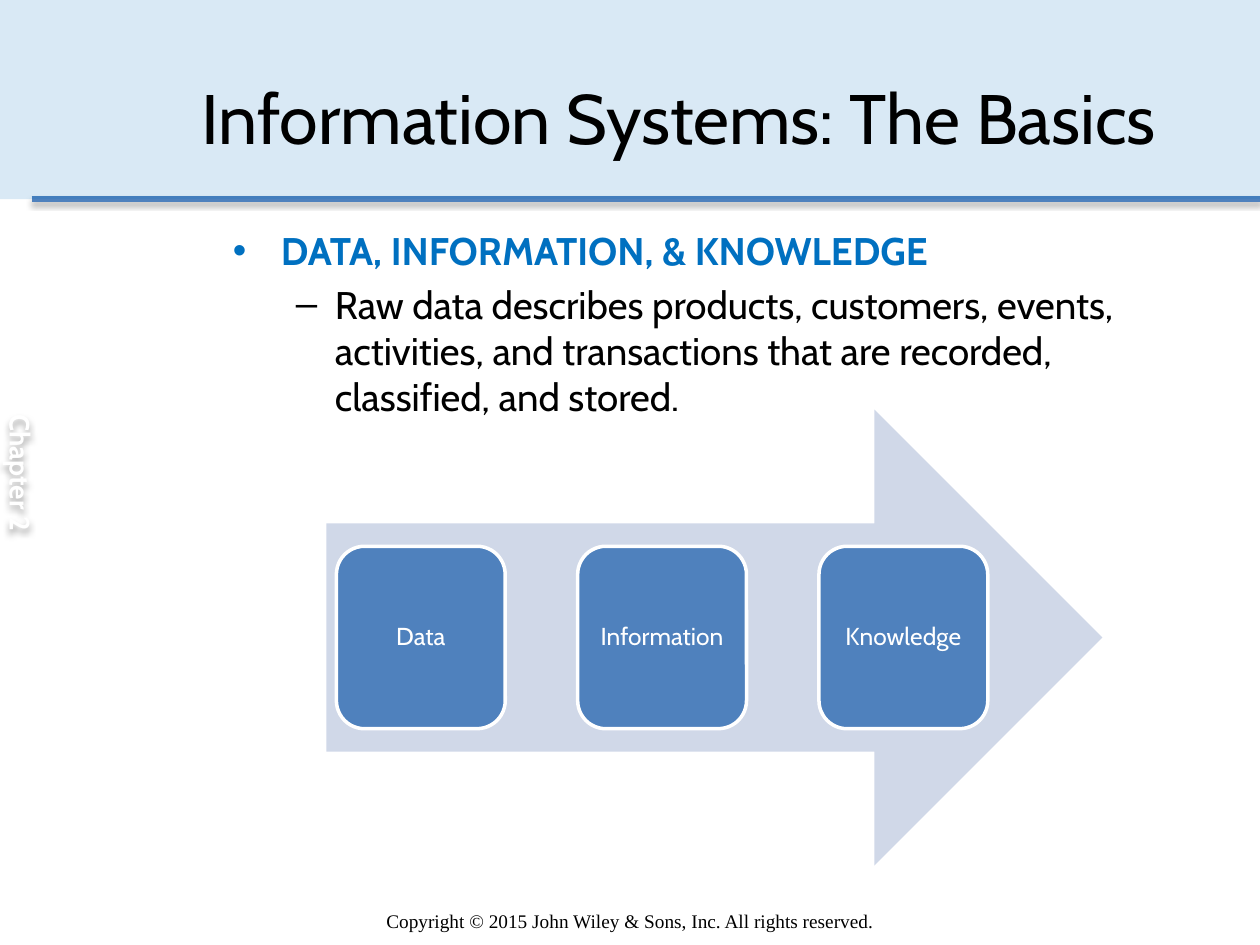
from lxml import etree
from pptx import Presentation
from pptx.dml.color import RGBColor
from pptx.enum.shapes import MSO_CONNECTOR, MSO_SHAPE
from pptx.enum.text import MSO_ANCHOR, MSO_AUTO_SIZE, PP_ALIGN
from pptx.oxml.ns import qn
from pptx.util import Inches, Pt

STRAIGHT = MSO_CONNECTOR.STRAIGHT
RECTANGLE = MSO_SHAPE.RECTANGLE
ROUNDED = MSO_SHAPE.ROUNDED_RECTANGLE
RIGHT_ARROW = MSO_SHAPE.RIGHT_ARROW
MIDDLE, TOP = MSO_ANCHOR.MIDDLE, MSO_ANCHOR.TOP
LEFT, CENTER = PP_ALIGN.LEFT, PP_ALIGN.CENTER
NO_AUTOFIT = MSO_AUTO_SIZE.NONE

FONT = "Cabin"
BLACK, WHITE, BLUE, ACCENT, PALE = "000000", "FFFFFF", "0070C0", "4F81BD", "D0D8E8"


def color(hex_string):
    """Return the colour for a hex string."""
    return RGBColor.from_string(hex_string)


def format_paragraph(paragraph, size, hex_string, bold=False, font=FONT, alignment=LEFT):
    """Align a paragraph and format its runs."""
    paragraph.alignment = alignment
    for run in paragraph.runs:
        run.font.name = font
        run.font.size = Pt(size)
        run.font.bold = bold
        run.font.color.rgb = color(hex_string)


def set_shadow(shape, opacity=0, blur=0, distance=0):
    """Give a shape a downward shadow, or none at zero opacity."""
    effects = etree.SubElement(shape.element.spPr, qn("a:effectLst"))
    if opacity:
        shadow = etree.SubElement(
            effects, qn("a:outerShdw"), blurRad=str(Pt(blur)), dist=str(Pt(distance)),
            dir="5400000", rotWithShape="0")
        shade = etree.SubElement(shadow, qn("a:srgbClr"), val=BLACK)
        etree.SubElement(shade, qn("a:alpha"), val=str(opacity * 1000))


def add_filled_shape(slide, kind, box, fill, outline=None):
    """Add a flat preset shape with an optional outline."""
    shape = slide.shapes.add_shape(kind, *map(Inches, box))
    shape.fill.solid()
    shape.fill.fore_color.rgb = color(fill)
    if outline:
        shape.line.color.rgb = color(outline)
        shape.line.width = Pt(2)
    else:
        shape.line.fill.background()
    set_shadow(shape)
    return shape


def add_text_box(slide, box, anchor=TOP):
    """Add a wrapping text box and return it."""
    text_box = slide.shapes.add_textbox(*map(Inches, box))
    text_box.text_frame.word_wrap = True
    text_box.text_frame.vertical_anchor = anchor
    return text_box


def add_header(slide, box, text):
    """Place the tinted band, its rule and the title."""
    left, top, width, height = box
    title = slide.shapes.title
    band = add_filled_shape(slide, RECTANGLE, box, BLUE)
    tint = band.element.spPr.find(qn("a:solidFill"))[0]
    etree.SubElement(tint, qn("a:alpha"), val="15000")
    bottom = Inches(top + height)
    rule = slide.shapes.add_connector(
        STRAIGHT, Inches(left + 0.25), bottom, Inches(left + width), bottom)
    rule.line.color.rgb = color(ACCENT)
    rule.line.width = Pt(3)
    set_shadow(rule, 35, 3.1, 1.8)
    title.element.addprevious(rule.element)
    title.element.addprevious(band.element)

    title.left, title.top = Inches(left + 1.5), Inches(top + 0.3)
    title.width, title.height = Inches(width - 2), Inches(1.25)
    title.text_frame.text = text
    title.text_frame.auto_size = NO_AUTOFIT
    title.text_frame.vertical_anchor = MIDDLE
    format_paragraph(title.text_frame.paragraphs[0], 40, BLACK)


def add_body(slide, box, items):
    """Place bulleted paragraphs, one indent level per item."""
    frame = add_text_box(slide, box).text_frame
    for level, (text, bullet, margin, hanging, hex_string, bold) in enumerate(items):
        paragraph = frame.add_paragraph() if level else frame.paragraphs[0]
        paragraph.text = text
        paragraph.level = level
        if level:
            paragraph.space_before = Pt(4.4)
        properties = paragraph._p.get_or_add_pPr()
        properties.set("marL", str(Inches(margin)))
        properties.set("indent", str(-Inches(hanging)))
        etree.SubElement(properties, qn("a:buFont"), typeface="Arial")
        etree.SubElement(properties, qn("a:buChar"), char=bullet)
        format_paragraph(paragraph, 22, hex_string, bold)


def add_process(slide, box, labels):
    """Place the arrow and its evenly spaced steps."""
    left, top, width, height = box
    add_filled_shape(slide, RIGHT_ARROW, box, PALE)
    step_width, step_height, pitch = 1.34, 0.4 * height, 1.915
    step_top = top + (height - step_height) / 2
    for index, label in enumerate(labels):
        step_box = (left + 0.08 + index * pitch, step_top, step_width, step_height)
        step = add_filled_shape(slide, ROUNDED, step_box, ACCENT, WHITE)
        frame = step.text_frame
        frame.margin_left = frame.margin_right = Inches(0.06)
        frame.margin_top = frame.margin_bottom = Inches(0.06)
        frame.word_wrap = True
        frame.vertical_anchor = MIDDLE
        frame.text = label
        frame.paragraphs[0].line_spacing = 0.9
        format_paragraph(frame.paragraphs[0], 14, WHITE, alignment=CENTER)


def add_chapter_mark(slide, box, text):
    """Place the vertical chapter label with its shadow."""
    text_box = add_text_box(slide, box, MIDDLE)
    frame = text_box.text_frame
    frame.text = text
    frame._txBody.bodyPr.set("vert", "vert")
    format_paragraph(frame.paragraphs[0], 16, WHITE, True, alignment=CENTER)
    set_shadow(text_box, 32, 3.5, 2.2)


def add_footer(slide, box, text):
    """Place the centred copyright line."""
    frame = add_text_box(slide, box).text_frame
    frame.text = text
    format_paragraph(frame.paragraphs[0], 11, BLACK, font="Times New Roman", alignment=CENTER)


def main():
    """Build and save the slide."""
    presentation = Presentation()
    presentation.slide_width, presentation.slide_height = Inches(10), Inches(7.5)
    slide = presentation.slides.add_slide(presentation.slide_layouts[5])
    add_header(slide, (0, 0, 10, 1.58), "Information Systems: The Basics")
    add_footer(slide, (0, 7.17, 10, 0.29),
               "Copyright © 2015 John Wiley & Sons, Inc. All rights reserved.")
    add_body(slide, (1.75, 1.75, 7.75, 4.95), [
        ("DATA, INFORMATION, & KNOWLEDGE", "•", 0.38, 0.38, BLUE, True),
        ("Raw data describes products, customers, events, activities, and transactions "
         "that are recorded, classified, and stored.", "–", 0.81, 0.31, BLACK, False),
    ])
    add_chapter_mark(slide, (0, 0, 0.33, 7.5), "Chapter 2")
    add_process(slide, (2.59, 3.25, 6.16, 3.62), ["Data", "Information", "Knowledge"])
    presentation.save("out.pptx")


if __name__ == "__main__":
    main()
